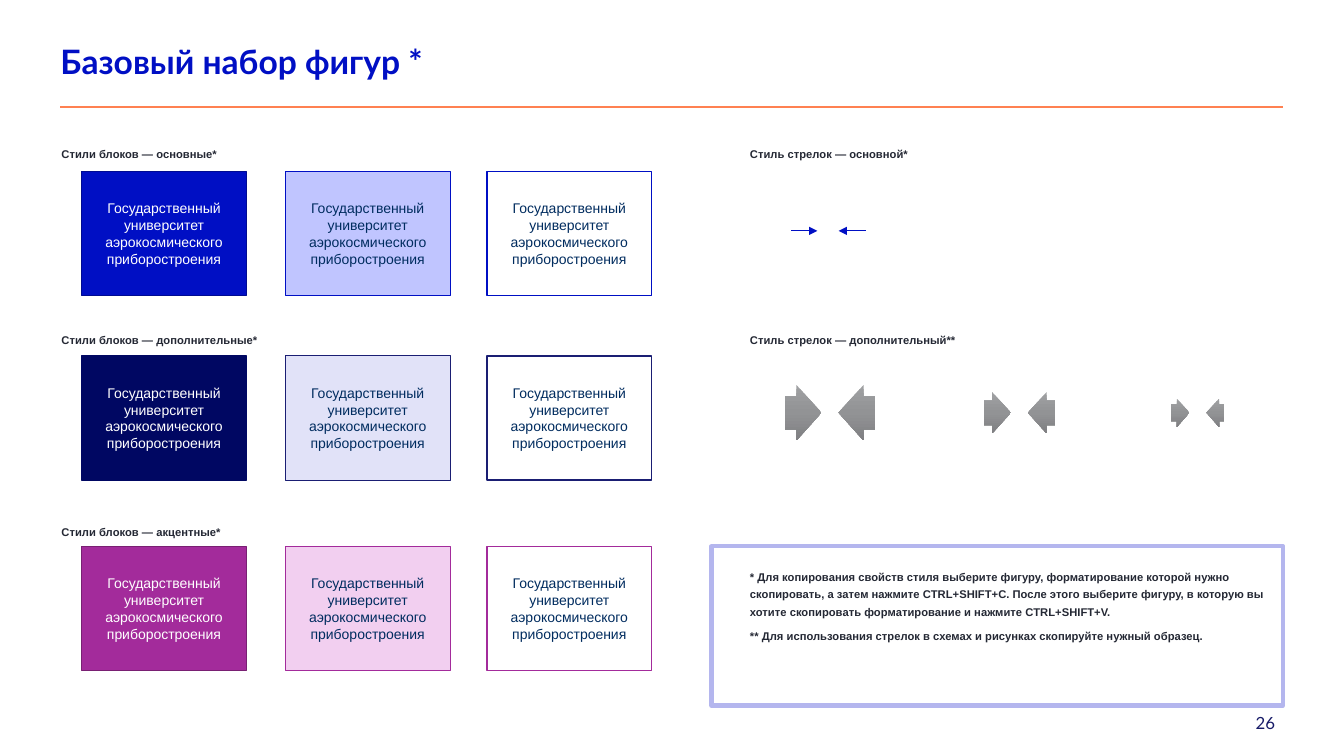
import copy

import lxml.etree
import pptx
import pptx.dml.color
import pptx.enum.shapes
import pptx.enum.text
import pptx.oxml
import pptx.oxml.ns
import pptx.util

Pt = pptx.util.Pt
RGBColor = pptx.dml.color.RGBColor
Align = pptx.enum.text.PP_ALIGN
Anchor = pptx.enum.text.MSO_ANCHOR
Shape = pptx.enum.shapes.MSO_SHAPE
qn = pptx.oxml.ns.qn

WHITE = RGBColor(0xFF, 0xFF, 0xFF)
BLUE = RGBColor(0x00, 0x0F, 0xC4)
BLUE_EDGE = RGBColor(0x00, 0x0B, 0x91)
BLUE_PALE = RGBColor(0xC0, 0xC5, 0xFF)
NAVY = RGBColor(0x00, 0x07, 0x62)
NAVY_EDGE = RGBColor(0x1A, 0x1E, 0x73)
NAVY_PALE = RGBColor(0xE1, 0xE2, 0xF8)
PURPLE = RGBColor(0xA3, 0x2B, 0x9B)
PURPLE_EDGE = RGBColor(0x79, 0x20, 0x73)
PURPLE_PALE = RGBColor(0xF2, 0xCF, 0xF0)
BLOCK_TEXT = RGBColor(0x00, 0x2C, 0x5F)
LABEL_TEXT = RGBColor(0x24, 0x28, 0x34)
NUMBER_TEXT = RGBColor(0x17, 0x1B, 0x68)
ORANGE = RGBColor(0xFF, 0x81, 0x51)
FRAME = RGBColor(0xB4, 0xB6, 0xEE)
GREYS = (RGBColor(0x9F, 0xA0, 0xA2), RGBColor(0x92, 0x93, 0x95), RGBColor(0x7F, 0x7F, 0x82))

# Content
TITLE = "Базовый набор фигур *"
PAGE_NUMBER = "26"
BLOCK = "Государственный университет аэрокосмического приборостроения"
NOTES = [
    "* Для копирования свойств стиля выберите фигуру, форматирование которой нужно "
    "скопировать, а затем нажмите CTRL+SHIFT+C. После этого выберите фигуру, в которую вы "
    "хотите скопировать форматирование и нажмите CTRL+SHIFT+V.",
    "** Для использования стрелок в схемах и рисунках скопируйте нужный образец.",
]
# Row: label, label top, block top, three styles of (fill, line, line width, text)
BLOCK_ROWS = [
    ("Стили блоков — основные*", 102.2, 122.4,
     [(BLUE, BLUE_EDGE, 1, WHITE), (BLUE_PALE, BLUE, 0.5, BLOCK_TEXT), (WHITE, BLUE, 1, BLOCK_TEXT)]),
    ("Стили блоков — дополнительные*", 235.4, 254.2,
     [(NAVY, NAVY, 1, WHITE), (NAVY_PALE, NAVY_EDGE, 0.5, BLOCK_TEXT), (WHITE, NAVY_EDGE, 1, BLOCK_TEXT)]),
    ("Стили блоков — акцентные*", 372.2, 390.2,
     [(PURPLE, PURPLE_EDGE, 1, WHITE), (PURPLE_PALE, PURPLE, 0.5, BLOCK_TEXT), (WHITE, PURPLE, 1, BLOCK_TEXT)]),
]
ARROW_LABELS = [("Стиль стрелок — основной*", 102.2), ("Стиль стрелок — дополнительный**", 235.4)]
THIN_ARROWS = [(565.2, 583.9), (618.5, 599)]  # start and end
WIDE_ARROWS = [(560.9, 25.9, 39.6), (702.7, 19.4, 29.5), (836.6, 13, 20.2)]  # left, width, height

# Layout
BLOCK_LEFTS = (58.3, 203.8, 347.8)
BLOCK_WIDTH, BLOCK_HEIGHT = 117.6, 88.6
LABEL_LEFT, ARROW_LABEL_LEFT = 43.9, 535.7
THIN_ARROW_Y, WIDE_ARROW_Y, WIDE_ARROW_GAP = 164.9, 294.8, 12.2


def clear_margins(text_frame):
    text_frame.word_wrap = True
    text_frame.margin_left = text_frame.margin_right = 0
    text_frame.margin_top = text_frame.margin_bottom = 0


def set_font(paragraph, name, size, color, bold=False):
    for run in paragraph.runs:
        run.font.name, run.font.size, run.font.bold = name, Pt(size), bold
        run.font.color.rgb = color


def add_text(slide, box, lines):
    text_frame = slide.shapes.add_textbox(*map(Pt, box)).text_frame
    clear_margins(text_frame)
    text_frame.text = "\n".join(lines)
    for index, paragraph in enumerate(text_frame.paragraphs):
        paragraph.line_spacing = 1.3
        if index:
            paragraph.space_before = Pt(5)
        set_font(paragraph, "Arial", 8, LABEL_TEXT, True)
    return text_frame


def add_line(slide, start, end, color, width, arrow=False):
    line = slide.shapes.add_connector(
        pptx.enum.shapes.MSO_CONNECTOR.STRAIGHT, *map(Pt, start + end))
    line.line.color.rgb, line.line.width = color, Pt(width)
    if arrow:
        lxml.etree.SubElement(line.line._get_or_add_ln(), qn("a:tailEnd"), type="triangle")
    lxml.etree.SubElement(line._element.spPr, qn("a:effectLst"))


def add_rectangle(slide, box, fill, line, width):
    shape = slide.shapes.add_shape(Shape.RECTANGLE, *map(Pt, box))
    shape.shadow.inherit = False
    if fill is None:
        shape.fill.background()
    else:
        shape.fill.solid()
        shape.fill.fore_color.rgb = fill
    shape.line.color.rgb, shape.line.width = line, Pt(width)
    return shape


def add_block(slide, left, top, fill, line, width, color):
    block = add_rectangle(slide, (left, top, BLOCK_WIDTH, BLOCK_HEIGHT), fill, line, width)
    text_frame = block.text_frame
    text_frame.word_wrap, text_frame.vertical_anchor = True, Anchor.MIDDLE
    text_frame.text = BLOCK
    text_frame.paragraphs[0].alignment = Align.CENTER
    set_font(text_frame.paragraphs[0], "Arial", 10, color)


def add_wide_arrow(slide, left, width, height, flipped):
    arrow = slide.shapes.add_shape(
        Shape.RIGHT_ARROW, Pt(left), Pt(WIDE_ARROW_Y - height / 2), Pt(width), Pt(height))
    arrow.shadow.inherit = False
    arrow.adjustments[0], arrow.adjustments[1] = 0.6, 0.69
    arrow.line.fill.background()
    arrow.fill.gradient()
    arrow.fill.gradient_angle = 270
    # The default gradient has two stops; add the middle one
    stops = arrow._element.spPr.find(".//" + qn("a:gsLst"))
    stops.insert(1, copy.deepcopy(stops[0]))
    for index, (stop, grey) in enumerate(zip(arrow.fill.gradient_stops, GREYS)):
        stop.position, stop.color.rgb = index / 2, grey
    if flipped:
        arrow._element.spPr.find(qn("a:xfrm")).set("flipH", "1")


def main():
    presentation = pptx.Presentation()
    presentation.slide_width, presentation.slide_height = Pt(960), Pt(540)
    slide = presentation.slides.add_slide(presentation.slide_layouts[5])

    # Title, rule and page number
    title = slide.shapes.title
    title.left, title.top, title.width, title.height = map(Pt, (43.2, 32.4, 756.7, 25.9))
    clear_margins(title.text_frame)
    title.text_frame.auto_size = pptx.enum.text.MSO_AUTO_SIZE.NONE
    title.text_frame.vertical_anchor = Anchor.MIDDLE
    title.text_frame.text = TITLE
    heading = title.text_frame.paragraphs[0]
    heading.alignment, heading.line_spacing = Align.LEFT, 0.9
    set_font(heading, "Lato", 24, BLUE, True)
    add_line(slide, (43.2, 76.5), (916.6, 76.5), ORANGE, 1.25)
    number = slide.shapes.add_textbox(*map(Pt, (736.6, 509, 174.2, 14.4))).text_frame
    clear_margins(number)
    number.text = PAGE_NUMBER
    number.paragraphs[0].alignment = Align.RIGHT
    set_font(number.paragraphs[0], "Lato", 12, NUMBER_TEXT)

    # Block styles
    for label, label_top, block_top, styles in BLOCK_ROWS:
        add_text(slide, (LABEL_LEFT, label_top, 407.5, 12.2), [label])
        for left, style in zip(BLOCK_LEFTS, styles):
            add_block(slide, left, block_top, *style)

    # Arrow styles
    for label, top in ARROW_LABELS:
        add_text(slide, (ARROW_LABEL_LEFT, top, 352, 12.2), [label])
    for start, end in THIN_ARROWS:
        add_line(slide, (start, THIN_ARROW_Y), (end, THIN_ARROW_Y), BLUE, 0.5, arrow=True)
    for left, width, height in WIDE_ARROWS:
        add_wide_arrow(slide, left, width, height, False)
        add_wide_arrow(slide, left + width + WIDE_ARROW_GAP, width, height, True)

    # Framed notes
    add_rectangle(slide, (508.3, 390.2, 408.2, 113.8), None, FRAME, 3)
    notes = add_text(slide, (ARROW_LABEL_LEFT, 361.4, 380.9, 141.1), NOTES)
    notes.vertical_anchor = Anchor.MIDDLE

    presentation.save("out.pptx")


if __name__ == "__main__":
    main()
